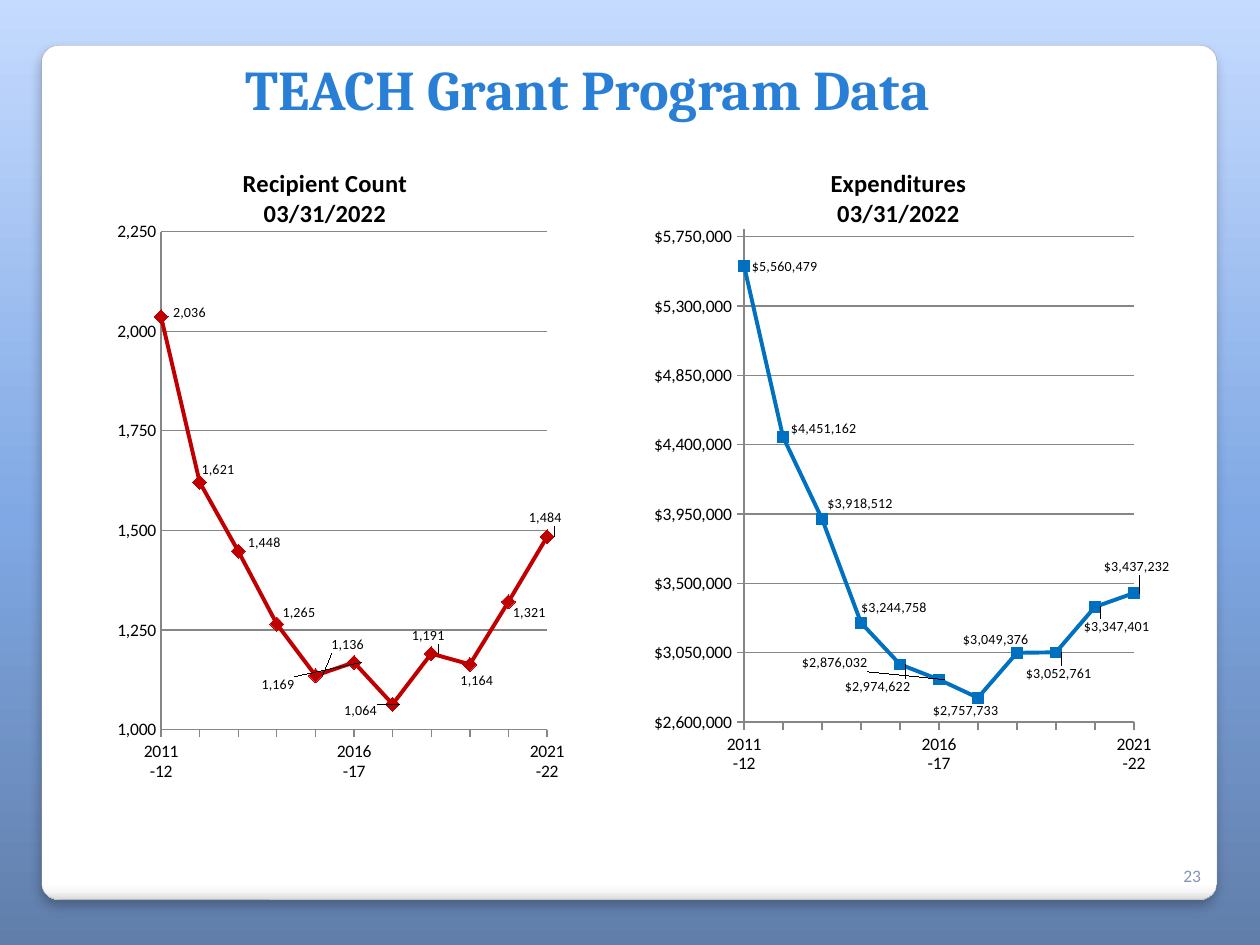
from lxml.etree import SubElement
from pptx import Presentation
from pptx.chart.data import CategoryChartData
from pptx.dml.color import RGBColor
from pptx.enum.chart import XL_CHART_TYPE as ChartType, XL_LABEL_POSITION as LabelPos
from pptx.enum.chart import XL_MARKER_STYLE as Marker, XL_TICK_MARK as Tick
from pptx.enum.shapes import MSO_SHAPE as Shape
from pptx.enum.text import MSO_ANCHOR as Anchor, PP_ALIGN as Align
from pptx.oxml import parse_xml
from pptx.oxml.ns import nsdecls, qn
from pptx.util import Inches, Pt

rgb = RGBColor.from_string


def set_gradient(fill, element, angle, stops):
    """Fill with any number of (percent, colour) stops."""
    fill.gradient()
    fill.gradient_angle = angle
    stop_list = element.find(".//" + qn("a:gsLst"))
    for stop in list(stop_list):
        stop_list.remove(stop)
    for percent, color in stops:
        stop = SubElement(stop_list, qn("a:gs"), pos=str(percent * 1000))
        SubElement(stop, qn("a:srgbClr"), val=color)


def set_layout(parent, index, **values):
    """Give a chart part a manual layout, as fractions of the chart."""
    for old in parent.findall(qn("c:layout")):
        parent.remove(old)
    layout = parse_xml(f"<c:layout {nsdecls('c')}><c:manualLayout/></c:layout>")
    for name, value in values.items():
        SubElement(layout[0], qn("c:" + name), val=str(value))
    parent.insert(index, layout)


deck = Presentation()
deck.slide_width, deck.slide_height = Inches(10), Inches(7.5)
page = deck.slides.add_slide(deck.slide_layouts[5])
set_gradient(page.background.fill, page.element, 90,
             [(0, "617EAA"), (45, "80A8E4"), (100, "C5DBFF")])

# White card behind everything
card = page.shapes.add_shape(Shape.ROUNDED_RECTANGLE, Inches(0.33), Inches(0.36),
                             Inches(9.33), Inches(6.78))
card.adjustments[0] = 0.02
set_gradient(card.fill, card.element, 270,
             [(0, "FFFFFF"), (98, "FFFFFF"), (99, "F7F7F7"), (100, "DADADA")])
card.line.color.rgb = rgb("A4A4A4")
card.line.width = Pt(0.16)
card.shadow.inherit = False
card.element.spPr.find(qn("a:effectLst")).append(parse_xml(
    f'<a:outerShdw {nsdecls("a")} blurRad="{Pt(6)}" dist="{Pt(4)}" dir="5400000" rotWithShape="0">'
    '<a:srgbClr val="000000"><a:alpha val="25000"/></a:srgbClr></a:outerShdw>'))
page.shapes.element.insert(2, card.element)

# Title, centred a little left of the box's middle
title = page.shapes.title
title.left, title.top, title.width, title.height = (
    Inches(0.5), Inches(0.44), Inches(8.83), Inches(0.58))
frame = title.text_frame
frame.text = "TEACH Grant Program Data"
frame.vertical_anchor = Anchor.BOTTOM
frame.margin_right = Inches(0.6)
para = frame.paragraphs[0]
para.alignment = Align.CENTER
font = para.runs[0].font
font.name, font.size, font.bold = "Cambria", Pt(32), True
font.color.rgb = rgb("297FD5")

# Label shifts are inches from the place just right of each point
charts = [
    dict(title="Recipient Count", left=0.5, width=4.5, color="C00000", format="#,##0",
         values=[2036, 1621, 1448, 1265, 1136, 1169, 1064, 1191, 1164, 1321, 1484],
         scale=(1000, 2250, 250), tick=Tick.NONE, marker=(Marker.DIAMOND, 8),
         plot=(0.173, 0.118, 0.681, 0.78), title_at=(0.31, 0.01),
         shifts=[(0, -0.03), (-0.08, -0.1), (-0.02, -0.07), (-0.05, -0.09),
                 (0.03, -0.24), (-0.83, 0.18), (-0.48, 0.05), (-0.25, -0.14),
                 (-0.17, 0.13), (-0.06, 0.09), (-0.24, -0.15)]),
    dict(title="Expenditures", left=4.71, width=5.29, color="0070C0", format='"$"#,##0',
         values=[5560479, 4451162, 3918512, 3244758, 2974622, 2876032, 2757733,
                 3049376, 3052761, 3347401, 3437232],
         scale=(2600000, 5800000, 450000), tick=Tick.OUTSIDE, marker=(Marker.SQUARE, 6),
         plot=(0.226, 0.114, 0.585, 0.772), title_at=(0.35, 0.01),
         shifts=[(-0.02, 0.01), (-0.02, -0.06), (-0.04, -0.12), (-0.08, -0.12),
                 (-0.52, 0.18), (-1.17, -0.13), (-0.44, 0.1), (-0.51, -0.1),
                 (-0.32, 0.17), (-0.17, 0.16), (-0.32, -0.21)]),
]
chart_height = 5.07
years = ["2011-12", "", "", "", "", "2016-17", "", "", "", "", "2021-22"]

for item in charts:
    data = CategoryChartData(number_format=item["format"])
    data.categories = years
    data.add_series(item["title"], item["values"])
    chart = page.shapes.add_chart(
        ChartType.LINE_MARKERS_STACKED, Inches(item["left"]), Inches(1.24),
        Inches(item["width"]), Inches(chart_height), data).chart
    chart.has_legend = False
    chart.font.name, chart.font.size = "Calibri", Pt(10)
    chart.font.color.rgb = rgb("000000")

    heading = chart.chart_title
    heading.text_frame.text = item["title"] + "\n03/31/2022"
    for para in heading.text_frame.paragraphs:
        font = para.runs[0].font
        font.name, font.size, font.bold = "Calibri", Pt(14), True
        font.color.rgb = rgb("000000")
    x, y = item["title_at"]
    set_layout(chart.element.find(".//" + qn("c:title")), 1,
               xMode="edge", yMode="edge", x=x, y=y)
    x, y, w, h = item["plot"]
    set_layout(chart.element.find(".//" + qn("c:plotArea")), 0, layoutTarget="inner",
               xMode="edge", yMode="edge", x=x, y=y, w=w, h=h)

    value_axis, category_axis = chart.value_axis, chart.category_axis
    value_axis.minimum_scale, value_axis.maximum_scale, value_axis.major_unit = item["scale"]
    value_axis.major_tick_mark = item["tick"]
    category_axis.major_tick_mark = Tick.OUTSIDE
    value_axis.has_major_gridlines = True
    value_axis.tick_labels.number_format = item["format"]
    value_axis.tick_labels.number_format_is_linked = False
    for part in (value_axis, category_axis, value_axis.major_gridlines):
        part.format.line.color.rgb = rgb("868686")
        part.format.line.width = Pt(0.75)
    for axis in (value_axis, category_axis):
        axis.tick_labels.font.size = Pt(10)
    # Points sit on the tick marks, so the line starts at the value axis
    crosses = chart.element.find(f".//{qn('c:valAx')}/{qn('c:crosses')}")
    crosses.addnext(parse_xml(f'<c:crossBetween {nsdecls("c")} val="midCat"/>'))

    plot = chart.plots[0]
    plot.vary_by_categories = False
    series = plot.series[0]
    series.smooth = False
    series.format.line.color.rgb = rgb(item["color"])
    series.format.line.width = Pt(2.25)
    marker = series.marker
    marker.style, marker.size = item["marker"]
    marker.format.fill.solid()
    marker.format.fill.fore_color.rgb = rgb(item["color"])
    marker.format.line.color.rgb = rgb(item["color"])

    labels = series.data_labels
    labels.show_value = True
    labels.number_format, labels.number_format_is_linked = item["format"], False
    labels.font.size = Pt(8)
    for index in range(len(years)):
        label = series.points[index].data_label
        label.font.size = Pt(8)
        label.position = LabelPos.RIGHT
    for dlbl, (dx, dy) in zip(chart.element.iter(qn("c:dLbl")), item["shifts"]):
        set_layout(dlbl, 1, x=dx / item["width"], y=dy / chart_height)

# Page number
box = page.shapes.add_textbox(Inches(9.13), Inches(6.68), Inches(0.5), Inches(0.4))
frame = box.text_frame
frame.word_wrap = True
frame.vertical_anchor = Anchor.BOTTOM
frame.text = "23"
para = frame.paragraphs[0]
para.alignment = Align.RIGHT
font = para.runs[0].font
font.name, font.size = "Calibri", Pt(10)
font.color.rgb = rgb("7F96B8")

deck.save("out.pptx")
